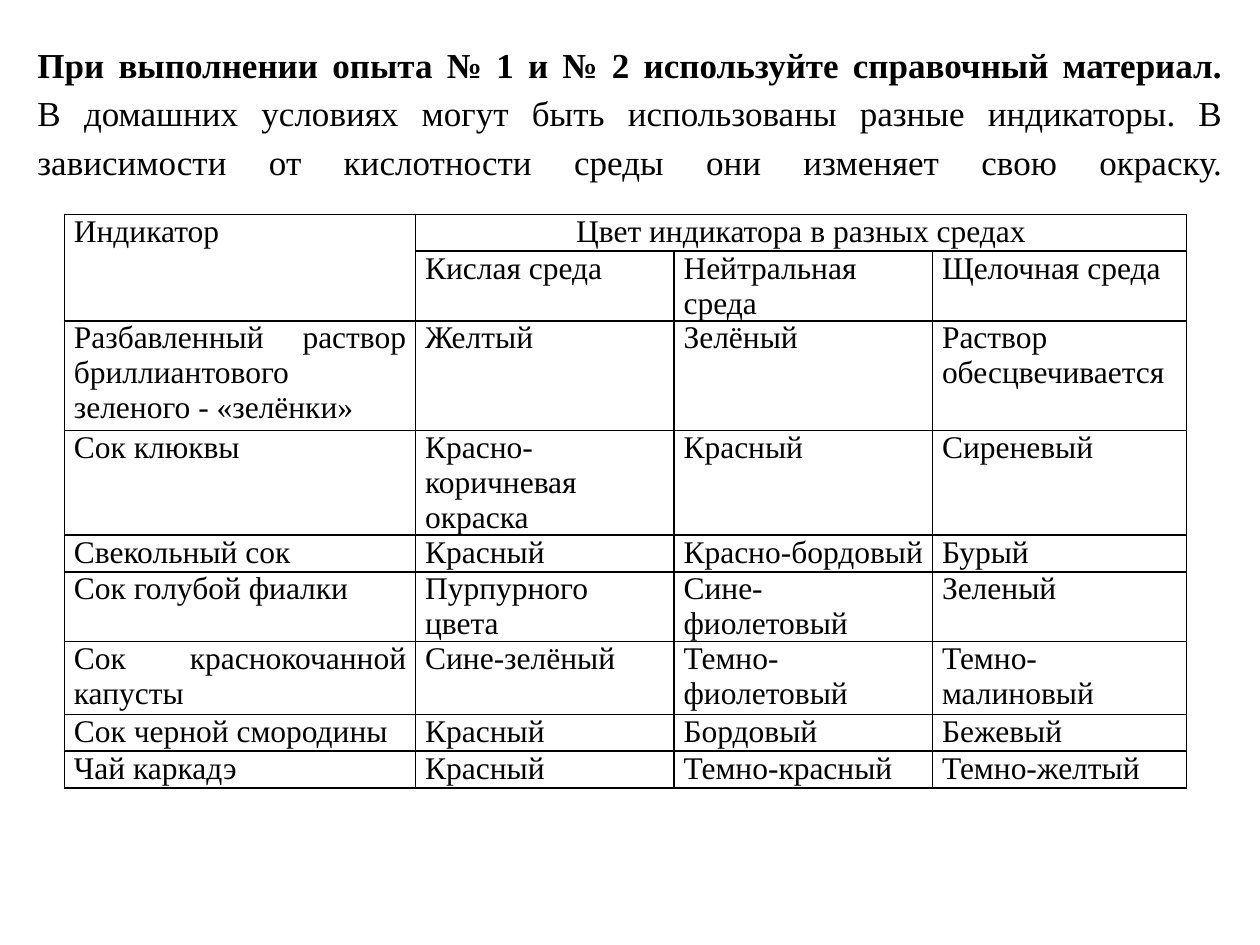
from copy import deepcopy
from dataclasses import dataclass

from lxml.etree import SubElement
from pptx import Presentation
from pptx.dml.color import RGBColor
from pptx.enum.text import MSO_AUTO_SIZE as AutoSize
from pptx.enum.text import MSO_VERTICAL_ANCHOR as Anchor
from pptx.enum.text import PP_PARAGRAPH_ALIGNMENT as Align
from pptx.oxml.ns import qn
from pptx.slide import Slide
from pptx.table import _Cell as Cell
from pptx.util import Cm, Pt

COLORS = {"text": "000000", "border": "000000"}
FONT_NAME = "Times New Roman"
TITLE_SIZE = 20
TABLE_SIZE = 18
COLUMN_WIDTHS = [7.08, 5.21, 5.21, 5.12]
ROW_HEIGHTS = [0.74, 0.74, 2.21, 1.47, 0.74, 0.74, 1.47, 0.74, 0.74]


@dataclass
class Indicator:
    name: str
    acid: str
    neutral: str
    alkaline: str


@dataclass
class TitlePart:
    text: str
    bold: bool


TITLE_PARTS = [
    TitlePart("При выполнении опыта № 1 и № 2 используйте справочный материал.", True),
    TitlePart(
        "В домашних условиях могут быть использованы разные индикаторы. "
        "В зависимости от кислотности среды они изменяет свою окраску.",
        False,
    ),
]

ROWS = [
    Indicator("Индикатор", "Цвет индикатора в разных средах", "", ""),
    Indicator("", "Кислая среда", "Нейтральная среда", "Щелочная среда"),
    Indicator(
        "Разбавленный раствор бриллиантового зеленого - «зелёнки»",
        "Желтый",
        "Зелёный",
        "Раствор обесцвечивается",
    ),
    Indicator("Сок клюквы", "Красно-коричневая окраска", "Красный", "Сиреневый"),
    Indicator("Свекольный сок", "Красный", "Красно-бордовый", "Бурый"),
    Indicator("Сок голубой фиалки", "Пурпурного цвета", "Сине-фиолетовый", "Зеленый"),
    Indicator(
        "Сок краснокочанной капусты", "Сине-зелёный", "Темно-фиолетовый", "Темно-малиновый"
    ),
    Indicator("Сок черной смородины", "Красный", "Бордовый", "Бежевый"),
    Indicator("Чай каркадэ", "Красный", "Темно-красный", "Темно-желтый"),
]


def apply_format(target: object, values: dict) -> None:
    for name, value in values.items():
        setattr(target, name, value)


def format_font(font: object, size: int, bold: bool = False) -> None:
    apply_format(font, {"name": FONT_NAME, "size": Pt(size), "bold": bold})
    font.color.rgb = RGBColor.from_string(COLORS["text"])


def draw_title(slide: Slide) -> None:
    title = slide.shapes.title
    apply_format(
        title, {"left": Cm(0.5), "top": Cm(0.76), "width": Cm(24.4), "height": Cm(2.77)}
    )
    frame = title.text_frame
    apply_format(
        frame,
        {
            "word_wrap": True,
            "auto_size": AutoSize.NONE,
            "vertical_anchor": Anchor.MIDDLE,
            "margin_top": Cm(1.1),
        },
    )
    paragraph = frame.paragraphs[0]
    apply_format(paragraph, {"alignment": Align.JUSTIFY, "line_spacing": 1.15})
    for part in TITLE_PARTS:
        run = paragraph.add_run()
        run.text = part.text
        format_font(run.font, TITLE_SIZE, part.bold)
        paragraph.add_line_break()
        paragraph._p[-1].insert(0, deepcopy(run._r.rPr))
    SubElement(paragraph._p, qn("a:endParaRPr"), sz=str(TITLE_SIZE * 100))


def draw_borders(cell: Cell) -> None:
    properties = cell._tc.get_or_add_tcPr()
    for position, side in enumerate(("L", "R", "T", "B")):
        line = SubElement(properties, qn(f"a:ln{side}"), w=str(Pt(1)))
        fill = SubElement(line, qn("a:solidFill"))
        SubElement(fill, qn("a:srgbClr"), val=COLORS["border"])
        properties.insert(position, line)


def draw_cell(cell: Cell, text: str, alignment: Align) -> None:
    apply_format(
        cell,
        {
            "margin_left": Cm(0.19),
            "margin_right": Cm(0.19),
            "margin_top": 0,
            "margin_bottom": 0,
        },
    )
    cell.fill.background()
    draw_borders(cell)
    if text:
        paragraph = cell.text_frame.paragraphs[0]
        paragraph.alignment = alignment
        run = paragraph.add_run()
        run.text = text
        format_font(run.font, TABLE_SIZE)


def draw_table(slide: Slide) -> None:
    table = slide.shapes.add_table(
        len(ROWS), len(COLUMN_WIDTHS), Cm(1.3), Cm(4.32), Cm(22.62), Cm(12.95)
    ).table
    apply_format(table, {"first_row": False, "horz_banding": False})
    for column, width in zip(table.columns, COLUMN_WIDTHS):
        column.width = Cm(width)
    for row, height in zip(table.rows, ROW_HEIGHTS):
        row.height = Cm(height)
    table.cell(0, 0).merge(table.cell(1, 0))
    table.cell(0, 1).merge(table.cell(0, 3))
    for row, item in zip(table.rows, ROWS):
        texts = (item.name, item.acid, item.neutral, item.alkaline)
        for cell, text in zip(row.cells, texts):
            spans_columns = cell.is_merge_origin and cell.span_width > 1
            draw_cell(cell, text, Align.CENTER if spans_columns else Align.JUSTIFY)


def main() -> None:
    presentation = Presentation()
    apply_format(presentation, {"slide_width": Cm(25.4), "slide_height": Cm(19.05)})
    slide = presentation.slides.add_slide(presentation.slide_layouts[5])
    draw_title(slide)
    draw_table(slide)
    presentation.save("out.pptx")


if __name__ == "__main__":
    main()
